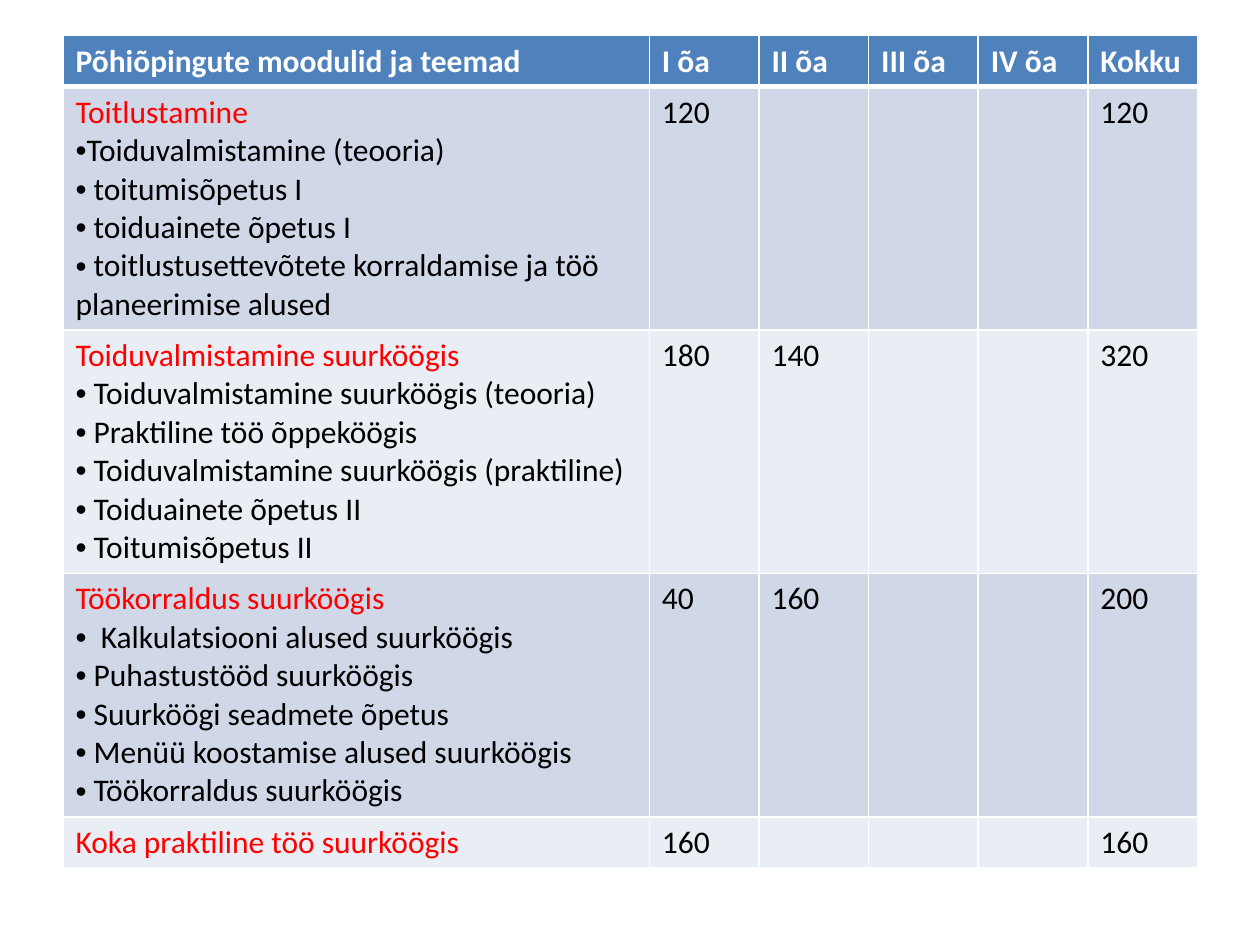
from lxml import etree
from pptx import Presentation
from pptx.dml.color import RGBColor
from pptx.oxml.ns import qn
from pptx.util import Cm, Pt

COLOURS = {
    "header": "4F81BD",
    "odd": "D0D8E8",
    "even": "E9EDF4",
    "white": "FFFFFF",
    "module": "FF0000",
    "text": "000000",
}
FONT = "Calibri"
HEADINGS = ["Põhiõpingute moodulid ja teemad", "I õa", "II õa", "III õa", "IV õa", "Kokku"]
MODULES = [
    ("Toitlustamine",
     ["Toiduvalmistamine (teooria)",
      " toitumisõpetus I",
      " toiduainete õpetus I",
      " toitlustusettevõtete korraldamise ja töö planeerimise alused"],
     ["120", "", "", "", "120"]),
    ("Toiduvalmistamine suurköögis",
     [" Toiduvalmistamine suurköögis (teooria)",
      " Praktiline töö õppeköögis",
      " Toiduvalmistamine suurköögis (praktiline)",
      " Toiduainete õpetus II",
      " Toitumisõpetus II"],
     ["180", "140", "", "", "320"]),
    ("Töökorraldus suurköögis",
     ["  Kalkulatsiooni alused suurköögis",
      " Puhastustööd suurköögis",
      " Suurköögi seadmete õpetus",
      " Menüü koostamise alused suurköögis",
      " Töökorraldus suurköögis"],
     ["40", "160", "", "", "200"]),
    ("Koka praktiline töö suurköögis", [], ["160", "", "", "", "160"]),
]
LEFT, TOP = 1.27, 0.72
TOPIC_WIDTH, YEAR_WIDTH = 11.82, 2.21
SHORT_ROW, TALL_ROW = 1.03, 4.9


def colour(name):
    return RGBColor.from_string(COLOURS[name])


def add_bullet(para):
    properties = para._p.get_or_add_pPr()
    properties.set("marL", "0")
    properties.set("indent", "0")
    etree.SubElement(properties, qn("a:buFont"), typeface="Arial")
    etree.SubElement(properties, qn("a:buChar"), char="•")


def add_borders(cell, widths):
    properties = cell._tc.get_or_add_tcPr()
    for position, (side, width) in enumerate(widths.items()):
        line = etree.Element(qn(f"a:ln{side}"), w=str(Pt(width)))
        fill = etree.SubElement(line, qn("a:solidFill"))
        etree.SubElement(fill, qn("a:srgbClr"), val=COLOURS["white"])
        properties.insert(position, line)


def fill_cell(cell, lines, fill, first_colour, bold=False):
    cell.fill.solid()
    cell.fill.fore_color.rgb = colour(fill)
    cell.text_frame.text = "\n".join(lines)
    for index, para in enumerate(cell.text_frame.paragraphs):
        if index:
            add_bullet(para)
        para.font.size = Pt(18)
        for span in para.runs:
            span.font.name = FONT
            span.font.size = Pt(18)
            span.font.bold = bold
            span.font.color.rgb = colour("text" if index else first_colour)


def main():
    deck = Presentation()
    deck.slide_width, deck.slide_height = Cm(25.4), Cm(19.05)
    page = deck.slides.add_slide(deck.slide_layouts[6])

    widths = [TOPIC_WIDTH] + [YEAR_WIDTH] * (len(HEADINGS) - 1)
    heights = [SHORT_ROW] + [TALL_ROW if topics else SHORT_ROW for _, topics, _ in MODULES]
    frame = page.shapes.add_table(len(heights), len(widths), Cm(LEFT), Cm(TOP),
                                  Cm(sum(widths)), Cm(sum(heights)))
    table = frame.table
    for column, width in zip(table.columns, widths):
        column.width = Cm(width)
    for row, height in zip(table.rows, heights):
        row.height = Cm(height)

    for column, heading in enumerate(HEADINGS):
        fill_cell(table.cell(0, column), [heading], "header", "white", bold=True)
    for row, (module, topics, hours) in enumerate(MODULES, start=1):
        band = "odd" if row % 2 else "even"
        fill_cell(table.cell(row, 0), [module] + topics, band, "module")
        for column, value in enumerate(hours, start=1):
            fill_cell(table.cell(row, column), [value], band, "text")

    for row in range(len(heights)):
        borders = {"L": 1, "R": 1, "T": 3 if row == 1 else 1, "B": 3 if row == 0 else 1}
        for column in range(len(widths)):
            add_borders(table.cell(row, column), borders)

    deck.save("out.pptx")


if __name__ == "__main__":
    main()
